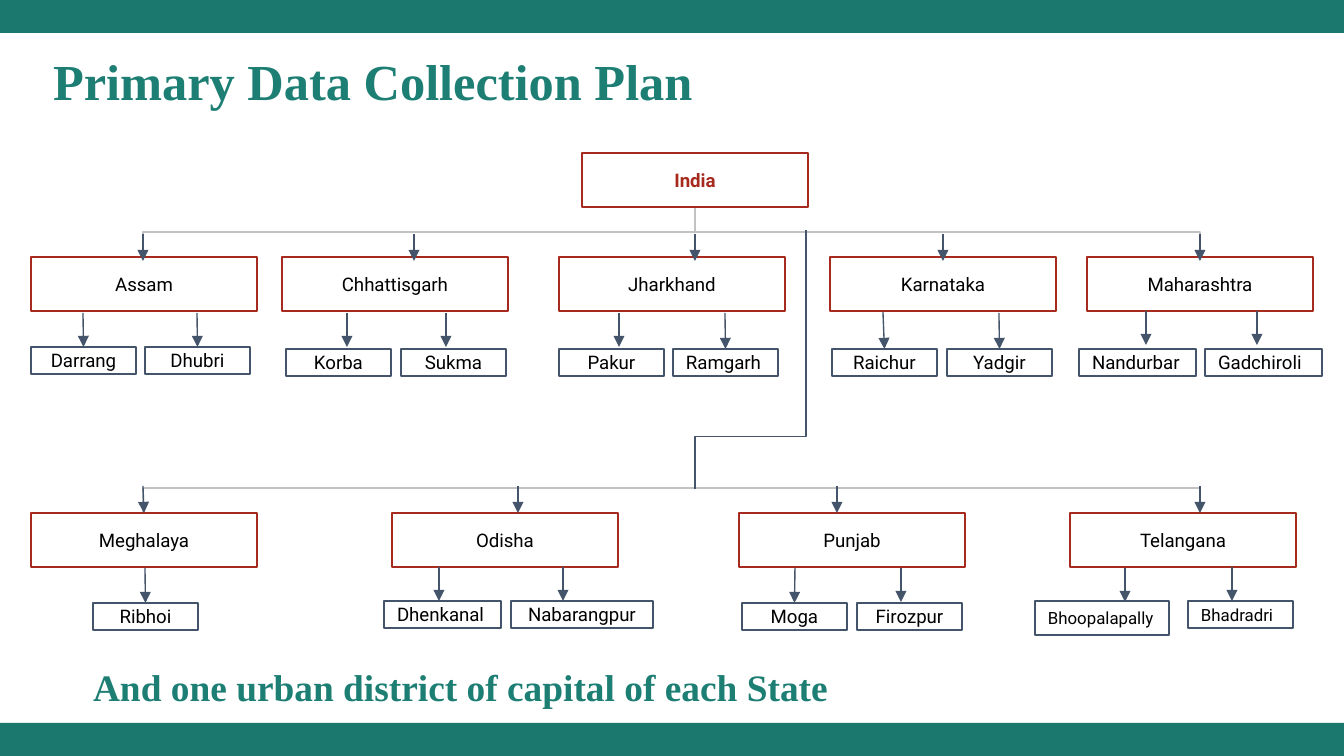
"""Build the slide showing states and districts of the primary data collection plan."""
import pptx
import pptx.util
import pptx.dml.color
import pptx.enum.shapes
import pptx.enum.text
import pptx.oxml.ns
from lxml import etree

RGBColor = pptx.dml.color.RGBColor
SHAPE = pptx.enum.shapes.MSO_SHAPE
LINE = pptx.enum.shapes.MSO_CONNECTOR
ALIGN = pptx.enum.text.PP_ALIGN
ANCHOR = pptx.enum.text.MSO_ANCHOR
Pt = pptx.util.Pt
qn = pptx.oxml.ns.qn

BAR = RGBColor(0x1B, 0x78, 0x6E)
TEAL = RGBColor(0x1D, 0x7E, 0x74)
RED = RGBColor(0xA7, 0x2A, 0x1E)
SLATE = RGBColor(0x44, 0x54, 0x6A)
GRAY = RGBColor(0xC2, 0xC2, 0xC2)
WHITE = RGBColor(0xFF, 0xFF, 0xFF)
BLACK = RGBColor(0, 0, 0)
PX = 914400 / 134.4


def add_box(kind, bounds, text, line, width, color=BLACK, size=10, align=ALIGN.CENTER):
    sp = s.shapes.add_shape(kind, *[round(v * PX) for v in bounds])
    sp.shadow.inherit = False
    sp.fill.solid()
    sp.fill.fore_color.rgb = WHITE
    sp.line.color.rgb = line
    sp.line.width = Pt(width)
    tf = sp.text_frame
    tf.margin_left = tf.margin_right = tf.margin_top = tf.margin_bottom = round(13 * PX)
    tf.vertical_anchor = ANCHOR.MIDDLE
    p = tf.paragraphs[0]
    p.text = text
    p.alignment = align
    p.font.name = "Roboto"
    p.font.size = Pt(size)
    p.font.color.rgb = color
    return sp


def add_line(kind, points, color=SLATE, width=0.75, arrow=False):
    cxn = s.shapes.add_connector(kind, *[round(v * PX) for v in points])
    cxn.line.color.rgb = color
    cxn.line.width = Pt(width)
    if arrow:
        etree.SubElement(cxn.line._get_or_add_ln(), qn("a:tailEnd"), type="triangle")
    etree.SubElement(cxn._element.spPr, qn("a:effectLst"))
    return cxn


prs = pptx.Presentation()
prs.slide_width = round(1344 * PX)
prs.slide_height = round(756 * PX)
s = prs.slides.add_slide(prs.slide_layouts[5])

for top in (0, 723):
    bar = s.shapes.add_shape(SHAPE.RECTANGLE, 0, round(top * PX), prs.slide_width, round(33 * PX))
    bar.shadow.inherit = False
    bar.fill.solid()
    bar.fill.fore_color.rgb = BAR
    bar.line.fill.background()

title = s.shapes.title
footer = s.shapes.add_textbox(0, 0, 0, 0)
for sp, text, size, bounds in (
    (title, "Primary Data Collection Plan", 27, (43, 66, 1152, 50)),
    (footer, "And one urban district of capital of each State", 20, (83, 665, 969, 50)),
):
    sp.left, sp.top, sp.width, sp.height = [round(v * PX) for v in bounds]
    tf = sp.text_frame
    tf.word_wrap = True
    tf.auto_size = pptx.enum.text.MSO_AUTO_SIZE.NONE
    tf.vertical_anchor = ANCHOR.BOTTOM
    tf.margin_left = tf.margin_right = round(10 * PX)
    tf.margin_top = tf.margin_bottom = round(5 * PX)
    p = tf.paragraphs[0]
    p.text = text
    p.alignment = ALIGN.LEFT
    p.line_spacing = 0.9
    p.font.name = "Times New Roman"
    p.font.size = Pt(size)
    p.font.bold = True
    p.font.color.rgb = TEAL

elbows = [(695, y, x, y + 50, GRAY, 1.5, 50000) for y in (207, 463) for x in (1200, 143)]
elbows.append((806, 230, 695, 489, SLATE, 0.75, 79800))
for x1, y1, x2, y2, color, width, bend in elbows:
    cx, cy, dx, dy = (x1 + x2) / 2, (y1 + y2) / 2, (x2 - x1) / 2, (y2 - y1) / 2
    cxn = add_line(LINE.ELBOW, (cx - dy, cy + dx, cx + dy, cy - dx), color, width)
    sp_pr = cxn._element.spPr
    sp_pr.find(qn("a:xfrm")).set("rot", "5400000")
    guides = sp_pr.find(qn("a:prstGeom")).find(qn("a:avLst"))
    etree.SubElement(guides, qn("a:gd"), name="adj1", fmla=f"val {bend}")

india = add_box(SHAPE.RECTANGLE, (582, 153, 226, 54), "India", RED, 1.5, RED)
india.text_frame.paragraphs[0].font.bold = True

states = [
    ("Assam", 31, 257, 143), ("Chhattisgarh", 282, 257, 414),
    ("Jharkhand", 559, 257, 695), ("Karnataka", 830, 257, 943),
    ("Maharashtra", 1087, 257, 1200), ("Meghalaya", 31, 513, 143),
    ("Odisha", 392, 513, 518), ("Punjab", 739, 513, 837),
    ("Telangana", 1070, 513, 1200),
]
for name, left, top, x in states:
    state = add_box(SHAPE.RECTANGLE, (left, top, 226, 54), name, RED, 1.5)
    tip = 261 if top == 257 else 513
    arrow = add_line(LINE.STRAIGHT, (x, tip - 27, x, tip), arrow=True)
    if name == "Meghalaya":
        arrow.end_connect(state, 0)

districts = [
    ("Darrang", 31, 347, 105, 83, 313), ("Dhubri", 145, 347, 105, 197, 313),
    ("Korba", 286, 349, 105, 347, 313), ("Sukma", 401, 349, 105, 446, 313),
    ("Pakur", 559, 349, 105, 619, 313), ("Ramgarh", 673, 349, 105, 725, 313),
    ("Raichur", 832, 349, 105, 883, 312), ("Yadgir", 947, 349, 105, 999, 313),
    ("Nandurbar", 1079, 349, 117, 1146, 311), ("Gadchiroli", 1205, 349, 117, 1257, 311),
    ("Ribhoi", 93, 603, 105, 145, 568), ("Dhenkanal", 384, 601, 117, 439, 567),
    ("Nabarangpur", 511, 601, 142, 563, 567), ("Moga", 742, 603, 105, 795, 568),
    ("Firozpur", 857, 603, 105, 901, 568), ("Bhoopalapally", 1035, 601, 134, 1125, 568),
    ("Bhadradri", 1188, 601, 105, 1232, 567),
]
left_aligned = {"Ramgarh", "Nandurbar", "Gadchiroli", "Dhenkanal", "Bhoopalapally", "Bhadradri"}
for name, left, top, width, x, y in districts:
    height = 34 if name == "Bhoopalapally" else 27
    size = 9 if name in ("Bhoopalapally", "Bhadradri") else 10
    align = ALIGN.LEFT if name in left_aligned else ALIGN.CENTER
    district = add_box(SHAPE.FLOWCHART_PROCESS, (left, top, width, height), name, SLATE, 0.75,
                       size=size, align=align)
    arrow = add_line(LINE.STRAIGHT, (x, y, x, y + 34), arrow=True)
    if abs(left + width / 2 - x) <= 3 and abs(top - y - 34) <= 3:
        arrow.end_connect(district, 0)

prs.save("out.pptx")
